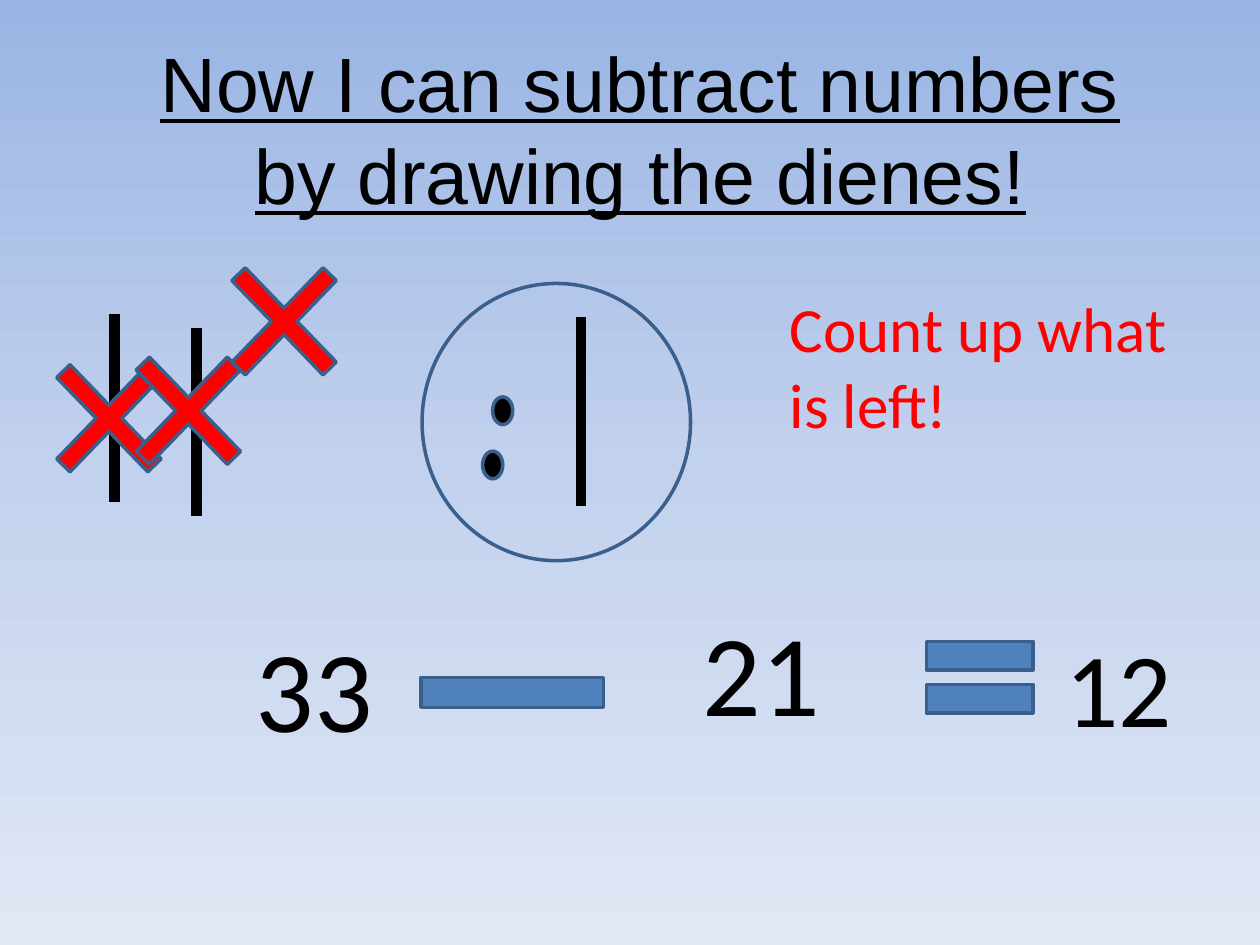
from copy import deepcopy
from pptx import Presentation
from pptx.dml.color import RGBColor
from pptx.enum.shapes import MSO_CONNECTOR, MSO_SHAPE
from pptx.enum.text import MSO_ANCHOR, MSO_AUTO_SIZE, PP_ALIGN
from pptx.oxml.ns import qn
from pptx.util import Pt

COLORS = {"black": "000000", "red": "FF0000", "blue": "4F81BD", "outline": "3A5F8C"}
BACKGROUND = [(0, "9AB5E4"), (0.5, "C2D1ED"), (1, "E1E8F5")]

TITLE = "Now I can subtract numbers by drawing the dienes!"
TENS = [(65.5, 179.3), (112.3, 187.2), (331.9, 181.4)]
TEN_LENGTH = 107.6
ONES = [(281.5, 226.8), (157, 175.7), (275.8, 257.8)]
ONE_SIZE = (11.5, 15.8)
CROSSES = [(12.2, 187.2), (57.6, 182.9), (112.3, 131.8)]
CROSS_SIZE = (100.1, 103.7)
OPERATORS = [
    (MSO_SHAPE.MATH_EQUAL, (518.4, 352.1, 82.8, 69.8)),
    (MSO_SHAPE.MATH_MINUS, (221.8, 359.3, 141.8, 72.7)),
]
REMAINDER_RING = (241.2, 162, 153.4, 158.4)
LABELS = [
    ("33", (139, 349.2, 82.1, 87.1), 66, "black", False),
    ("21", (394.6, 339.8, 82.1, 87.1), 66, "black", False),
    ("Count up what is left!", (444.2, 162, 232.6, 94.3), 36, "red", True),
]
ANSWER = ("12", (601.9, 352.1, 103.7, 79.9), 60, "black", True)


def rgb(name):
    return RGBColor.from_string(COLORS[name])


def write(frame, text, size, color="black", font="Calibri", align=PP_ALIGN.LEFT,
          underline=None, wrap=True):
    frame.word_wrap = wrap
    paragraph = frame.paragraphs[0]
    paragraph.alignment = align
    run = paragraph.add_run()
    run.text = text
    run.font.size = Pt(size)
    run.font.name = font
    run.font.underline = underline
    run.font.color.rgb = rgb(color)


def add_label(slide, text, box, size, color, wrap):
    frame = slide.shapes.add_textbox(*map(Pt, box)).text_frame
    write(frame, text, size, color=color, wrap=wrap)
    frame.auto_size = MSO_AUTO_SIZE.SHAPE_TO_FIT_TEXT


def add_symbol(slide, preset, box, fill=None):
    symbol = slide.shapes.add_shape(preset, *map(Pt, box))
    symbol.shadow.inherit = False
    if fill:
        symbol.fill.solid()
        symbol.fill.fore_color.rgb = rgb(fill)
    else:
        symbol.fill.background()
    symbol.line.color.rgb = rgb("outline")
    symbol.line.width = Pt(2)
    return symbol


def add_ten(slide, left, top):
    ten = slide.shapes.add_connector(
        MSO_CONNECTOR.STRAIGHT, Pt(left), Pt(top), Pt(left), Pt(top + TEN_LENGTH))
    ten.line.color.rgb = rgb("black")
    ten.line.width = Pt(6)
    properties = ten._element.spPr
    properties.append(properties.makeelement(qn("a:effectLst"), {}))


def paint_background(slide):
    fill = slide.background.fill
    fill.gradient()
    fill.gradient_angle = 270
    stop_list = slide.element.find(".//" + qn("a:gsLst"))
    stop_list.append(deepcopy(stop_list[0]))
    for stop, (position, color) in zip(fill.gradient_stops, BACKGROUND):
        stop.position = position
        stop.color.rgb = RGBColor.from_string(color)


def main():
    deck = Presentation()
    deck.slide_width, deck.slide_height = Pt(720), Pt(540)
    slide = deck.slides.add_slide(deck.slide_layouts[5])
    paint_background(slide)

    title = slide.shapes.title
    title.left, title.top, title.width, title.height = map(Pt, (59.8, 15.1, 612, 115.9))
    title.text_frame.vertical_anchor = MSO_ANCHOR.MIDDLE
    write(title.text_frame, TITLE, 44, font="Arial", align=PP_ALIGN.CENTER, underline=True)

    for ten in TENS:
        add_ten(slide, *ten)
    for one in ONES:
        add_symbol(slide, MSO_SHAPE.OVAL, one + ONE_SIZE, fill="black")
    for preset, box in OPERATORS:
        add_symbol(slide, preset, box, fill="blue")
    for label in LABELS:
        add_label(slide, *label)
    for cross in CROSSES:
        mark = add_symbol(slide, MSO_SHAPE.MATH_MULTIPLY, cross + CROSS_SIZE, fill="red")
        mark.adjustments[0] = 0.105
    add_symbol(slide, MSO_SHAPE.OVAL, REMAINDER_RING)
    add_label(slide, *ANSWER)

    deck.save("out.pptx")


if __name__ == "__main__":
    main()
